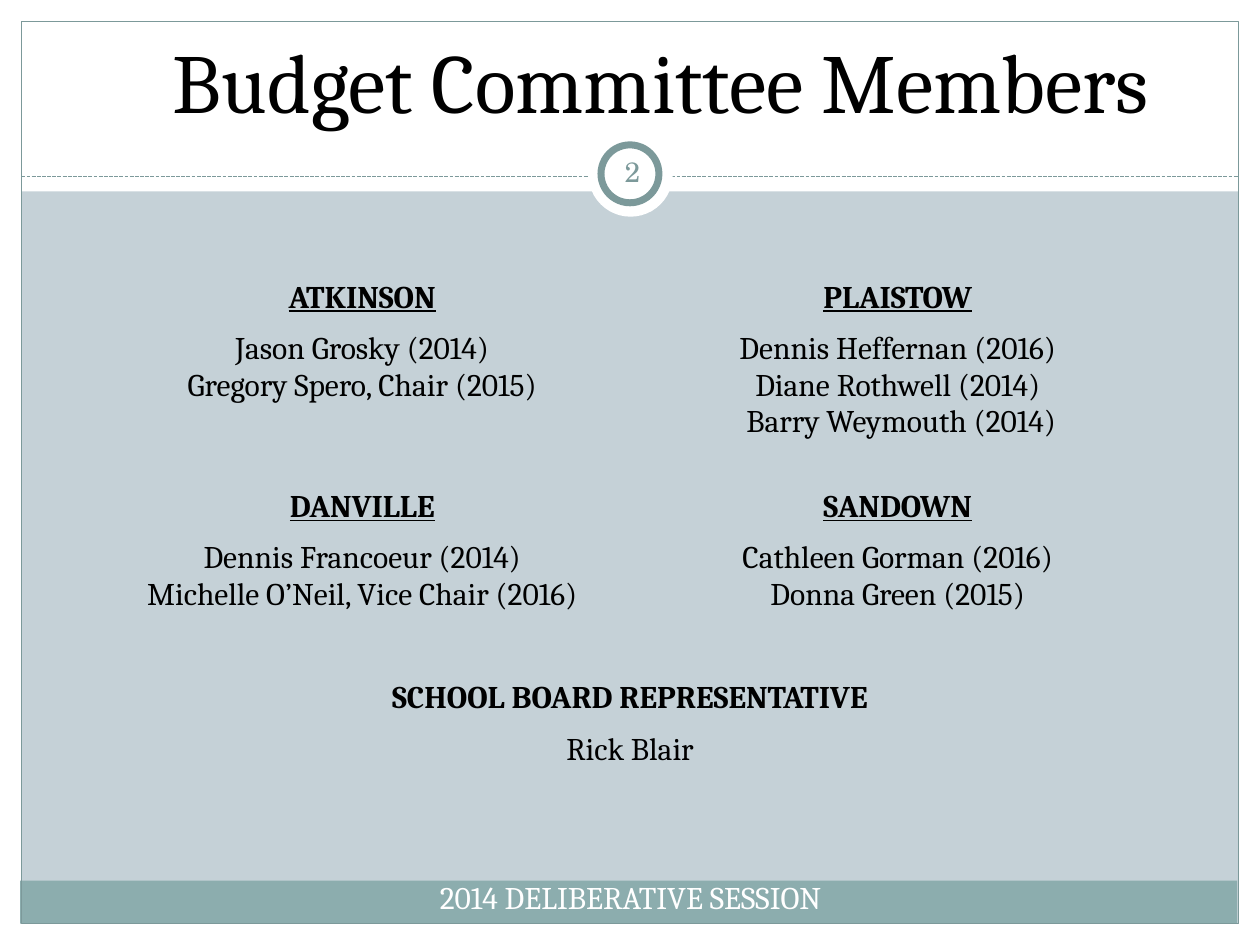
from dataclasses import dataclass
from typing import NamedTuple, Optional

from lxml import etree
from pptx import Presentation
from pptx.dml.color import RGBColor
from pptx.enum import dml, shapes, text
from pptx.oxml import ns
from pptx.util import Inches, Pt


@dataclass(frozen=True)
class Theme:
    white: str = "FFFFFF"
    black: str = "000000"
    backdrop: str = "C5D1D7"
    band: str = "8CADAE"
    line: str = "7C999A"
    font: str = "Cambria"
    number_font: str = "TeX Gyre Schola"
    title: int = 48
    body: int = 18
    number: int = 16


class Box(NamedTuple):
    left: float
    top: float
    width: float
    height: float


class Panel(NamedTuple):
    box: Box
    fill: Optional[str] = None
    line_width: float = 0
    kind: shapes.MSO_SHAPE = shapes.MSO_SHAPE.RECTANGLE


class Label(NamedTuple):
    words: str
    box: Box
    size: int
    color: str
    font: str
    anchor: text.MSO_ANCHOR = text.MSO_ANCHOR.TOP
    inset: Optional[float] = None
    indent: float = 0


class Row(NamedTuple):
    height: float
    cells: tuple[str, ...]
    bold: bool = False
    underline: bool = False


THEME = Theme()
OVAL = shapes.MSO_SHAPE.OVAL
NO_GRID_STYLE = "{2D5ABB26-0587-4C30-8999-92F81FD0307C}"

# Frame parts, back to front; the divider runs under the ring
FRAME = [
    Panel(Box(0, 7.33, 10, 0.17), THEME.white),
    Panel(Box(0, 0, 10, 1.52), THEME.white),
    Panel(Box(0, 0, 0.17, 7.5), THEME.white),
    Panel(Box(9.83, 0, 0.17, 7.5), THEME.white),
    Panel(Box(0.16, 6.99, 9.66, 0.34), THEME.band),
    Panel(Box(0.17, 0.17, 9.66, 7.16), line_width=0.75),
]
RING = [
    Panel(Box(4.67, 1.05, 0.67, 0.67), THEME.white, kind=OVAL),
    Panel(Box(4.77, 1.15, 0.46, 0.46), THEME.white, 4, OVAL),
]

TITLE = Label("Budget Committee Members", Box(0.33, 0.25, 9.33, 0.83), THEME.title,
              THEME.black, THEME.font, text.MSO_ANCHOR.BOTTOM, indent=0.5)
FOOTER = Label("2014 DELIBERATIVE SESSION", Box(0.17, 6.92, 9.67, 0.4), THEME.body,
               THEME.white, THEME.font)
NUMBER = Label("2", Box(4.77, 1.12, 0.5, 0.48), THEME.number, THEME.line,
               THEME.number_font, text.MSO_ANCHOR.MIDDLE, inset=0.05)

# A row with a single cell spans both columns
MEMBERS = [
    Row(0.41, ("ATKINSON", "PLAISTOW"), True, True),
    Row(1.25, ("Jason Grosky (2014)\nGregory Spero, Chair (2015)",
               "Dennis Heffernan (2016)\nDiane Rothwell (2014)\n Barry Weymouth (2014)")),
    Row(0.41, ("DANVILLE", "SANDOWN"), True, True),
    Row(0.68, ("Dennis Francoeur (2014)\nMichelle O’Neil, Vice Chair (2016)",
               "Cathleen Gorman (2016)\nDonna Green (2015)")),
    Row(0.41, ("", "")),
    Row(0.41, ("SCHOOL BOARD REPRESENTATIVE",), True),
    Row(0.41, ("Rick Blair",)),
]


def rgb(color: str) -> RGBColor:
    return RGBColor.from_string(color)


def lengths(box: Box) -> list[Inches]:
    return [Inches(value) for value in box]


def style_text(tf, size: int, color: str, font: str,
               bold: bool = False, underline: bool = False) -> None:
    for p in tf.paragraphs:
        p.alignment = text.PP_ALIGN.CENTER
        for r in p.runs:
            r.font.size = Pt(size)
            r.font.name = font
            r.font.color.rgb = rgb(color)
            r.font.bold = bold
            r.font.underline = underline


def add_panel(slide, panel: Panel) -> None:
    sp = slide.shapes.add_shape(panel.kind, *lengths(panel.box))
    sp.shadow.inherit = False
    if panel.fill:
        sp.fill.solid()
        sp.fill.fore_color.rgb = rgb(panel.fill)
    else:
        sp.fill.background()
    if panel.line_width:
        sp.line.color.rgb = rgb(THEME.line)
        sp.line.width = Pt(panel.line_width)
    else:
        sp.line.fill.background()


def add_divider(slide, left: float, right: float, y: float) -> None:
    line = slide.shapes.add_connector(shapes.MSO_CONNECTOR.STRAIGHT, Inches(left),
                                      Inches(y), Inches(right), Inches(y))
    line.line.color.rgb = rgb(THEME.line)
    line.line.width = Pt(0.75)
    line.line.dash_style = dml.MSO_LINE.SQUARE_DOT
    etree.SubElement(line._element.spPr, ns.qn("a:effectLst"))


def add_label(slide, label: Label) -> None:
    tf = slide.shapes.add_textbox(*lengths(label.box)).text_frame
    tf.word_wrap = True
    tf.vertical_anchor = label.anchor
    if label.inset is not None:
        tf.margin_left = tf.margin_right = Inches(label.inset)
        tf.margin_top = tf.margin_bottom = Inches(label.inset)
    tf.text = label.words
    if label.indent:
        tf.paragraphs[0]._p.get_or_add_pPr().set("marL", str(Inches(label.indent)))
    style_text(tf, label.size, label.color, label.font)


def add_members(slide, rows: list[Row], left: float, top: float, width: float) -> None:
    box = Box(left, top, width, sum(row.height for row in rows))
    table = slide.shapes.add_table(len(rows), 2, *lengths(box)).table
    table.first_row = table.horz_banding = False
    table._tbl.tblPr.find(ns.qn("a:tableStyleId")).text = NO_GRID_STYLE
    for i, row in enumerate(rows):
        table.rows[i].height = Inches(row.height)
        if len(row.cells) == 1:
            table.cell(i, 0).merge(table.cell(i, 1))
        for j, words in enumerate(row.cells):
            cell = table.cell(i, j)
            cell.fill.background()
            cell.text_frame.text = words
            style_text(cell.text_frame, THEME.body, THEME.black, THEME.font,
                       row.bold, row.underline)


def main() -> None:
    prs = Presentation()
    prs.slide_width, prs.slide_height = Inches(10), Inches(7.5)
    slide = prs.slides.add_slide(prs.slide_layouts[6])
    slide.background.fill.solid()
    slide.background.fill.fore_color.rgb = rgb(THEME.backdrop)

    # Frame, divider and number ring
    for panel in FRAME:
        add_panel(slide, panel)
    add_divider(slide, 0.17, 9.83, 1.4)
    for panel in RING:
        add_panel(slide, panel)

    # Content
    add_label(slide, TITLE)
    add_members(slide, MEMBERS, 0.75, 2.17, 8.5)
    add_label(slide, FOOTER)
    add_label(slide, NUMBER)
    prs.save("out.pptx")


if __name__ == "__main__":
    main()
